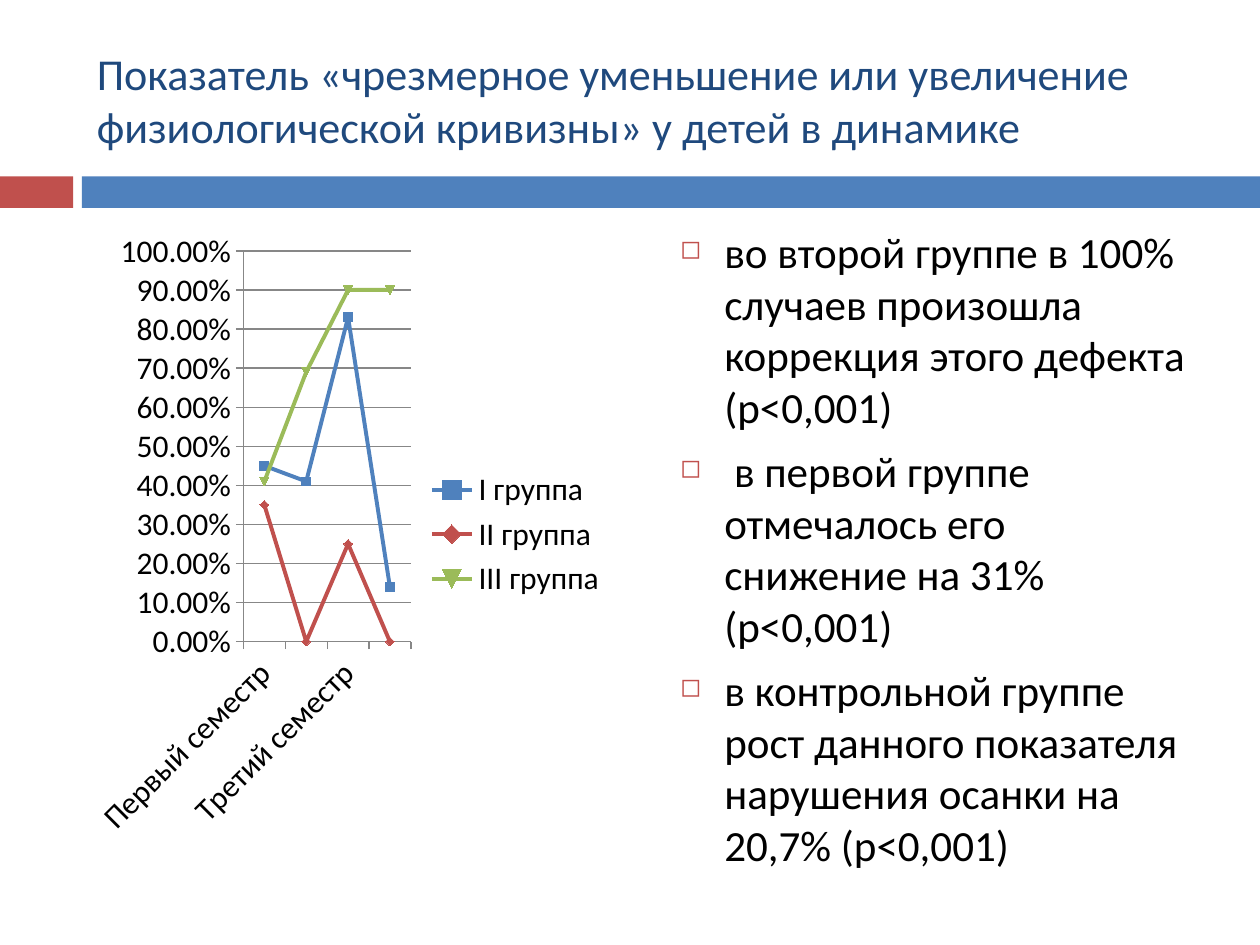
from lxml.etree import SubElement
from pptx import Presentation
from pptx.chart.data import CategoryChartData
from pptx.dml.color import RGBColor
from pptx.enum.chart import XL_CHART_TYPE as ChartType, XL_LEGEND_POSITION as LegendPosition
from pptx.enum.chart import XL_TICK_MARK as TickMark
from pptx.enum.shapes import MSO_SHAPE as Shape
from pptx.enum.text import MSO_ANCHOR as Anchor
from pptx.oxml.ns import qn
from pptx.util import Inches, Pt

BLUE, RED, GREEN, NAVY, BLACK, GRAY = "4F81BD", "C0504D", "9BBB59", "1F497D", "000000", "878787"
TITLE = "Показатель «чрезмерное уменьшение или увеличение физиологической кривизны» у детей в динамике"
FINDINGS = [
    "во второй группе в 100% случаев произошла коррекция этого дефекта (p<0,001)",
    " в первой группе отмечалось его снижение на 31% (p<0,001)",
    "в контрольной группе рост данного показателя нарушения осанки на 20,7% (p<0,001)",
]
SEMESTERS = ["Первый семестр", "Второй семестр", "Третий семестр", "Четвертый семестр"]
GROUPS = [
    ("I группа", BLUE, [0.45, 0.41, 0.83, 0.14]),
    ("II группа", RED, [0.35, 0, 0.25, 0]),
    ("III группа", GREEN, [0.41, 0.69, 0.9, 0.9]),
]


def rgb(value):
    """Turn a hex string into a colour."""
    return RGBColor.from_string(value)


def inches(box):
    """Turn left, top, width and height into lengths."""
    return [Inches(value) for value in box]


def set_font(font, size, color):
    """Apply the deck typeface with a size and a colour."""
    for name, value in {"name": "Calibri", "size": Pt(size), "bold": False}.items():
        setattr(font, name, value)
    font.color.rgb = rgb(color)


def add_band(page, box, accent=0.58, gap=0.07):
    """Draw the red block and the blue bar under the title."""
    left, top, width, height = box
    start = accent + gap
    for x, span, color in [(left, accent, RED), (left + start, width - start, BLUE)]:
        bar = page.shapes.add_shape(Shape.RECTANGLE, *inches((x, top, span, height)))
        bar.shadow.inherit = False
        bar.fill.solid()
        bar.fill.fore_color.rgb = rgb(color)
        bar.line.fill.background()


def add_text(page, box, texts, size, color, anchor=Anchor.TOP):
    """Place paragraphs in a wrapping text box and return them."""
    frame = page.shapes.add_textbox(*inches(box)).text_frame
    for name, value in {"word_wrap": True, "vertical_anchor": anchor}.items():
        setattr(frame, name, value)
    for index, text in enumerate(texts):
        para = frame.add_paragraph() if index else frame.paragraphs[0]
        span = para.add_run()
        span.text = text
        set_font(span.font, size, color)
    return frame.paragraphs


def add_findings(page, box):
    """Place the findings as a list with square red bullets."""
    for para in add_text(page, box, FINDINGS, 24.6, BLACK):
        para.space_before = Pt(7)
        props = para._p.get_or_add_pPr()
        props.set("marL", str(Inches(0.35)))
        props.set("indent", str(-Inches(0.35)))
        tint = SubElement(props, qn("a:buClr"))
        SubElement(tint, qn("a:srgbClr"), val=RED)
        SubElement(props, qn("a:buSzPct"), val="60000")
        SubElement(props, qn("a:buChar"), char="◻")


def add_trend_chart(page, box):
    """Draw the line chart of the three groups by semester."""
    data = CategoryChartData(number_format="0.00%")
    data.categories = SEMESTERS
    for name, _, values in GROUPS:
        data.add_series(name, values)
    chart = page.shapes.add_chart(ChartType.LINE_MARKERS, *inches(box), data).chart
    set_font(chart.font, 18, BLACK)
    chart.has_title = False
    chart.has_legend = True
    chart.legend.position = LegendPosition.RIGHT
    chart.legend.include_in_layout = False
    plot = chart.plots[0]
    plot.vary_by_categories = False
    for series, (_, color, _) in zip(plot.series, GROUPS):
        series.smooth = False
        series.format.line.width = Pt(2.25)
        series.format.line.color.rgb = rgb(color)
        series.marker.format.fill.solid()
        series.marker.format.fill.fore_color.rgb = rgb(color)
        series.marker.format.line.color.rgb = rgb(color)
    value_axis = chart.value_axis
    for name, value in {"minimum_scale": 0, "maximum_scale": 1, "major_unit": 0.1}.items():
        setattr(value_axis, name, value)
    value_axis.tick_labels.number_format = "0.00%"
    value_axis.tick_labels.number_format_is_linked = False
    value_axis.has_major_gridlines = True
    for axis in (value_axis, chart.category_axis):
        axis.major_tick_mark = TickMark.OUTSIDE
    for lines in (value_axis, value_axis.major_gridlines, chart.category_axis):
        lines.format.line.color.rgb = rgb(GRAY)
        lines.format.line.width = Pt(0.75)


def main():
    """Build the slide and save the deck."""
    deck = Presentation()
    deck.slide_width, deck.slide_height = Inches(10), Inches(7.5)
    page = deck.slides.add_slide(deck.slide_layouts[6])
    add_band(page, (0, 1.4, 10, 0.25))
    add_text(page, (0.67, 0.25, 8.92, 1.08), [TITLE], 25.2, NAVY, Anchor.MIDDLE)
    add_trend_chart(page, (0.67, 1.74, 4.25, 5))
    add_findings(page, (5.3, 1.74, 4.25, 5))
    deck.save("out.pptx")


if __name__ == "__main__":
    main()
